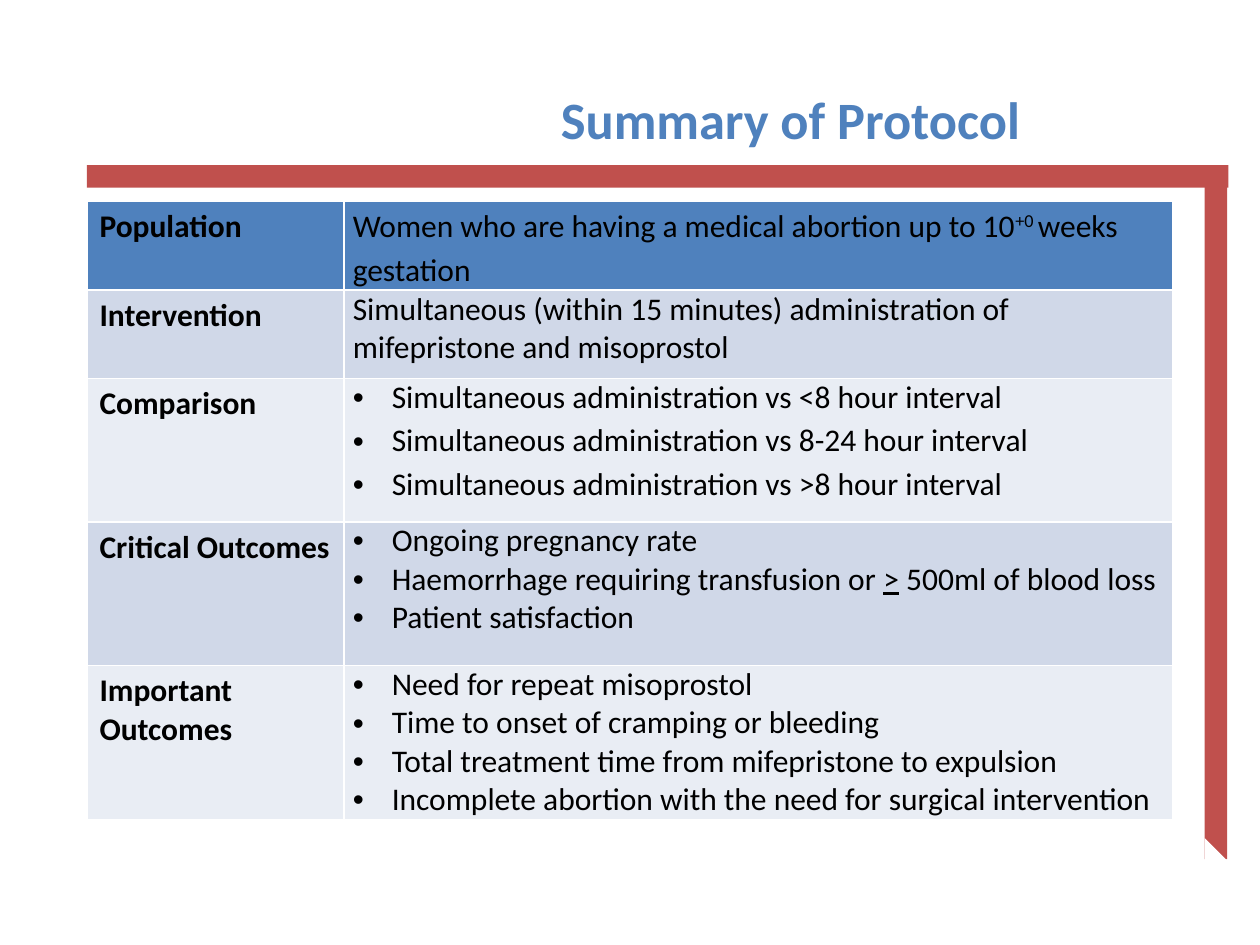
from pptx import Presentation
from pptx.dml.color import RGBColor
from pptx.enum.shapes import MSO_SHAPE
from pptx.enum.text import MSO_ANCHOR, PP_ALIGN
from pptx.oxml.ns import qn
from pptx.util import Inches, Pt
from lxml import etree

COLORS = {"red": "C0504D", "blue": "4F81BD", "band": "D0D8E8",
          "light": "E9EDF4", "white": "FFFFFF", "black": "000000"}


def add_run(p, text, size=18, color="black", bold=False):
    r = p.add_run()
    r.text = text
    r.font.name = "Calibri"
    r.font.size = Pt(size)
    r.font.bold = bold
    r.font.color.rgb = RGBColor.from_string(COLORS[color])
    return r


def add_bullet(p):
    pPr = p._p.get_or_add_pPr()
    pPr.set("marL", str(Inches(0.31)))
    pPr.set("indent", str(-Inches(0.31)))
    etree.SubElement(pPr, qn("a:buFont")).set("typeface", "Arial")
    etree.SubElement(pPr, qn("a:buChar")).set("char", "•")


prs = Presentation()
prs.slide_width, prs.slide_height = Inches(10), Inches(7.5)
s = prs.slides.add_slide(prs.slide_layouts[5])

frame = [
    (MSO_SHAPE.RECTANGLE, 0.69, 1.31, 9.06, 0.18, "red"),
    (MSO_SHAPE.RECTANGLE, 9.56, 1.31, 0.18, 5.51, "red"),
    (MSO_SHAPE.ISOSCELES_TRIANGLE, 9.56, 6.65, 0.18, 0.18, "white"),
]
for kind, x, y, w, h, color in frame:
    sp = s.shapes.add_shape(kind, Inches(x), Inches(y), Inches(w), Inches(h))
    sp.shadow.inherit = False
    sp.fill.solid()
    sp.fill.fore_color.rgb = RGBColor.from_string(COLORS[color])
    sp.line.fill.background()
    if kind == MSO_SHAPE.ISOSCELES_TRIANGLE:
        sp.adjustments[0] = 0

title = s.shapes.title
title.left, title.top = Inches(2.59), Inches(0.2)
title.width, title.height = Inches(7.11), Inches(1.04)
tf = title.text_frame
tf.vertical_anchor = MSO_ANCHOR.BOTTOM
p = tf.paragraphs[0]
p.alignment = PP_ALIGN.CENTER
p._p.get_or_add_pPr().set("marL", str(Inches(0.26)))
add_run(p, "Summary of Protocol", 30, "blue", True)

rows = [
    ("Population", 0.7, "blue",
     [["Women who are having a medical abortion up to 10", "+0 ", "weeks gestation"]]),
    ("Intervention", 0.7, "band",
     [["Simultaneous (within 15 minutes) administration of mifepristone and misoprostol"]]),
    ("Comparison", 1.14, "light",
     [["Simultaneous administration vs <8 hour interval"],
      ["Simultaneous administration vs 8-24 hour interval"],
      ["Simultaneous administration vs >8 hour interval"]]),
    ("Critical Outcomes", 1.14, "band",
     [["Ongoing pregnancy rate"],
      ["Haemorrhage requiring transfusion or ", ">", " 500ml of blood loss"],
      ["Patient satisfaction"]]),
    ("Important Outcomes", 1.14, "light",
     [["Need for repeat misoprostol"],
      ["Time to onset of cramping or bleeding"],
      ["Total treatment time from mifepristone to expulsion"],
      ["Incomplete abortion with the need for surgical intervention"]]),
]
table = s.shapes.add_table(len(rows), 2, Inches(0.69), Inches(1.6),
                           Inches(8.62), Inches(4.82)).table
table.columns[0].width, table.columns[1].width = Inches(2.04), Inches(6.58)

for i, (label, height, color, paragraphs) in enumerate(rows):
    table.rows[i].height = Inches(height)
    head, body = table.cell(i, 0), table.cell(i, 1)
    for cell in (head, body):
        cell.fill.solid()
        cell.fill.fore_color.rgb = RGBColor.from_string(COLORS[color])
    add_run(head.text_frame.paragraphs[0], label, bold=True)

    body.margin_left = body.margin_right = Inches(0.07)
    body.margin_top = body.margin_bottom = 0
    tf = body.text_frame
    for j, texts in enumerate(paragraphs):
        p = tf.add_paragraph() if j else tf.paragraphs[0]
        if label == "Population":
            p.line_spacing = 1.15
        if label in ("Intervention", "Comparison"):
            p.space_before, p.space_after = Pt(2), Pt(1)
        if len(paragraphs) > 1:
            add_bullet(p)
        for text in texts:
            r = add_run(p, text)
            if text == "+0 ":
                r.font._element.set("baseline", "30000")
            if text == ">":
                r.font.underline = True

prs.save("out.pptx")
